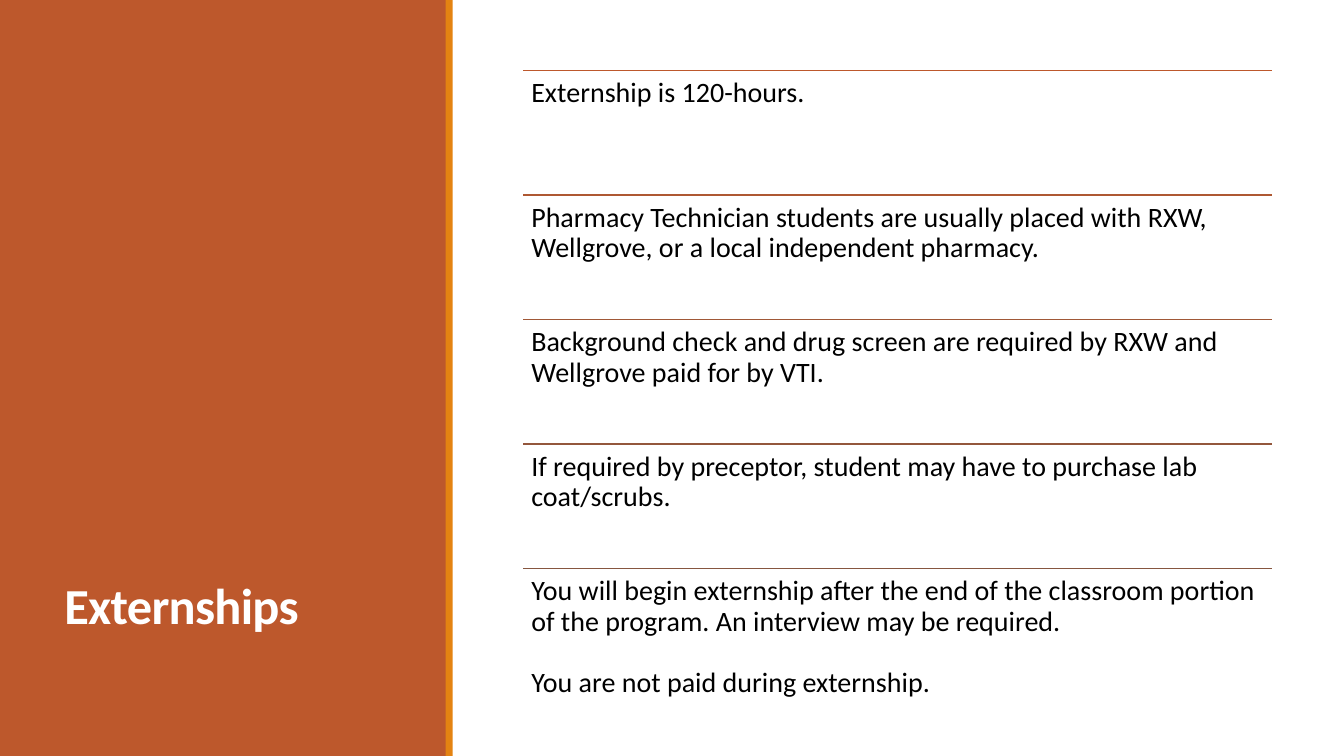
from lxml import etree
from pptx import Presentation
from pptx.dml.color import RGBColor
from pptx.enum import shapes, text
from pptx.oxml import ns
from pptx.util import Inches, Pt

ITEMS = [
    ("BD582C", ["Externship is 120-hours."]),
    ("AE5832", ["Pharmacy Technician students are usually placed with RXW, "
                "Wellgrove, or a local independent pharmacy."]),
    ("A05837", ["Background check and drug screen are required by RXW and "
                "Wellgrove paid for by VTI."]),
    ("93573C", ["If required by preceptor, student may have to purchase lab "
                "coat/scrubs."]),
    ("865640", ["You will begin externship after the end of the classroom "
                "portion of the program. An interview may be required.",
                "You are not paid during externship."]),
]
LEFT, TOP, WIDTH, STEP = 5.19, 0.7, 7.43, 1.235


def color(code):
    """Turn a hex string into a colour."""
    return RGBColor.from_string(code)


def add_bar(slide, left, width, fill):
    """Add a full-height vertical bar."""
    bar = slide.shapes.add_shape(shapes.MSO_SHAPE.RECTANGLE, Inches(left), 0,
                                 Inches(width), Inches(7.5))
    bar.shadow.inherit = False
    bar.fill.solid()
    bar.fill.fore_color.rgb = color(fill)
    bar.line.fill.background()


def add_rule(slide, top, code):
    """Add the line above an item."""
    rule = slide.shapes.add_connector(
        shapes.MSO_CONNECTOR.STRAIGHT, Inches(LEFT), Inches(top),
        Inches(LEFT + WIDTH), Inches(top))
    rule.line.color.rgb = color(code)
    rule.line.width = Pt(1.25)
    etree.SubElement(rule._element.spPr, ns.qn("a:effectLst"))


def add_box(slide, left, top, width, height, inset):
    """Add a wrapping text box and return its frame."""
    box = slide.shapes.add_textbox(Inches(left), Inches(top), Inches(width),
                                   Inches(height))
    frame = box.text_frame
    frame.word_wrap = True
    frame.margin_left = frame.margin_right = Inches(inset)
    frame.margin_top = frame.margin_bottom = Inches(inset)
    return frame


def add_run(para, words, size, code, bold=False):
    """Add one styled run to a paragraph."""
    run = para.add_run()
    run.text = words
    run.font.name = "Calibri"
    run.font.size = Pt(size)
    run.font.bold = bold
    run.font.color.rgb = color(code)
    return run


def add_title(slide, words):
    """Add the title on the side panel."""
    frame = add_box(slide, 0.54, 5.65, 3.37, 0.7, 0.1)
    frame.vertical_anchor = text.MSO_ANCHOR.MIDDLE
    run = add_run(frame.paragraphs[0], words, 36, "FFFFFF", True)
    run.font._element.set("spc", "-50")


def add_item(slide, top, code, parts):
    """Add a ruled item with its paragraphs."""
    add_rule(slide, top, code)
    frame = add_box(slide, LEFT, top, WIDTH, STEP, 0.08)
    for index, words in enumerate(parts):
        para = frame.paragraphs[0]
        if index:
            para = frame.add_paragraph()
            para.space_before = Pt(22)
        para.line_spacing = 0.9
        add_run(para, words, 20, "000000")


def main():
    """Build the slide and save it."""
    deck = Presentation()
    deck.slide_width, deck.slide_height = Inches(13.33), Inches(7.5)
    slide = deck.slides.add_slide(deck.slide_layouts[6])
    add_bar(slide, 0, 4.43, "BD582C")
    add_title(slide, "Externships")
    add_bar(slide, 4.42, 0.07, "E48312")
    for index, (code, parts) in enumerate(ITEMS):
        add_item(slide, TOP + index * STEP, code, parts)
    deck.save("out.pptx")


if __name__ == "__main__":
    main()
